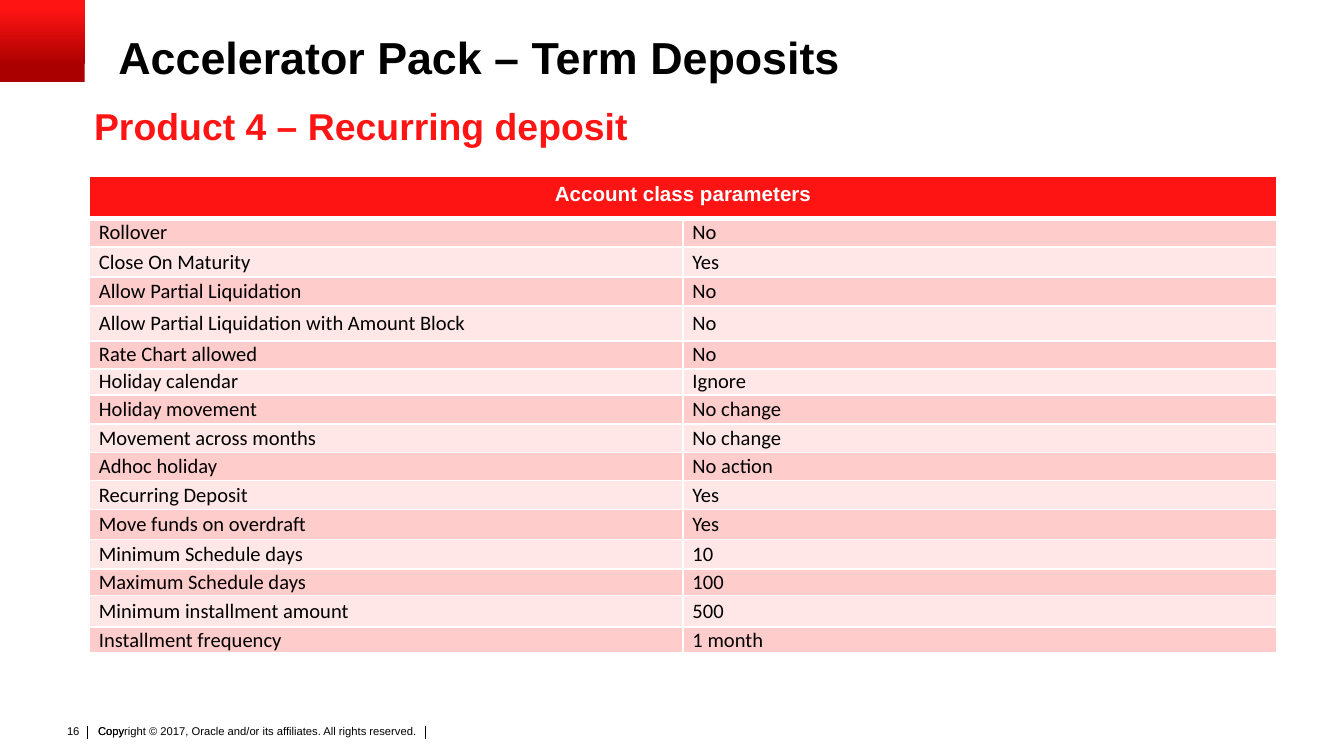
from lxml.etree import SubElement
from pptx import Presentation
from pptx.dml.color import RGBColor
from pptx.enum.shapes import MSO_CONNECTOR, MSO_SHAPE
from pptx.enum.text import MSO_ANCHOR as ANCHOR, MSO_AUTO_SIZE as FIT, PP_ALIGN as ALIGN
from pptx.oxml.ns import qn
from pptx.util import Pt

BLACK = RGBColor(0, 0, 0)
WHITE = RGBColor(255, 255, 255)
RED = RGBColor(0xFF, 0x14, 0x14)
DARK_RED = RGBColor(0xAA, 0, 0)
BANDS = [RGBColor(0xFF, 0xCC, 0xCC), RGBColor(0xFF, 0xE7, 0xE7)]

TITLE = "Accelerator Pack – Term Deposits"
SUBTITLE = "Product 4 – Recurring deposit"
HEADER = "Account class parameters"
HEADER_HEIGHT = 22.4
PARAMETERS = [
    ("Rollover", "No", 15.5),
    ("Close On Maturity", "Yes", 16),
    ("Allow Partial Liquidation", "No", 15.5),
    ("Allow Partial Liquidation with Amount Block", "No", 18.75),
    ("Rate Chart allowed", "No", 15),
    ("Holiday calendar", "Ignore", 14),
    ("Holiday movement", "No change", 15.5),
    ("Movement across months", "No change", 15.5),
    ("Adhoc holiday", "No action", 15),
    ("Recurring Deposit", "Yes", 15.5),
    ("Move funds on overdraft", "Yes", 16),
    ("Minimum Schedule days", "10", 16),
    ("Maximum Schedule days", "100", 14),
    ("Minimum installment amount", "500", 17),
    ("Installment frequency", "1 month", 14),
]
FOOTER = [
    ("Copyright © 2017, Oracle and/or its affiliates. All rights reserved.",
     (49.7, 386.6, 197.3, 17.3), (2.9, 1.4), ALIGN.LEFT),
    ("Copy", (49.7, 386.6, 197.3, 17.3), (2.9, 1.4), ALIGN.LEFT),
    ("16", (28.1, 384.5, 21.6, 14.4), (7.2, 3.6), ALIGN.RIGHT),
]
DIVIDERS = [46.8, 228]


def style(p, size, color, bold=False, font="Arial"):
    for r in p.runs:
        r.font.name, r.font.size, r.font.bold = font, Pt(size), bold
        r.font.color.rgb = color


def set_margins(box, x, y):
    box.margin_left = box.margin_right = Pt(x)
    box.margin_top = box.margin_bottom = Pt(y)


def place(sp, left, top, width, height):
    sp.left, sp.top, sp.width, sp.height = Pt(left), Pt(top), Pt(width), Pt(height)


def fill_placeholder(sp, text, box, size, color):
    place(sp, *box)
    tf = sp.text_frame
    tf.text = text
    tf.auto_size, tf.vertical_anchor = FIT.NONE, ANCHOR.TOP
    set_margins(tf, 0, 0)
    p = tf.paragraphs[0]
    pPr = p._p.get_or_add_pPr()
    pPr.set("marL", "0")
    pPr.set("indent", "0")
    SubElement(pPr, qn("a:buNone"))
    p.alignment, p.space_before = ALIGN.LEFT, Pt(0)
    style(p, size, color, True)
    return p


def set_borders(cell, top, bottom):
    tcPr = cell._tc.get_or_add_tcPr()
    for side, width in zip("LRTB", (1, 1, top, bottom)):
        ln = SubElement(tcPr, qn(f"a:ln{side}"), w=str(Pt(width)))
        SubElement(SubElement(ln, qn("a:solidFill")), qn("a:srgbClr"), val=str(WHITE))


def set_cell(cell, text, color, top=1, bottom=1):
    set_borders(cell, top, bottom)
    cell.fill.solid()
    cell.fill.fore_color.rgb = color
    cell.text_frame.text = text
    return cell.text_frame.paragraphs[0]


prs = Presentation()
prs.slide_width, prs.slide_height = Pt(720), Pt(405)
slide = prs.slides.add_slide(prs.slide_layouts[1])
shapes = slide.shapes

corner = shapes.add_shape(MSO_SHAPE.RECTANGLE, 0, 0, Pt(45.4), Pt(43.9))
corner.shadow.inherit = False
corner.line.fill.background()
corner.fill.gradient()
corner.fill.gradient_angle = 90
for stop, (position, color) in zip(corner.fill.gradient_stops, [(0.2, DARK_RED), (0.9, RED)]):
    stop.position, stop.color.rgb = position, color

p = fill_placeholder(shapes.title, TITLE, (63.4, 19.4, 648, 24.5), 24, BLACK)
p.line_spacing = 0.9
fill_placeholder(slide.placeholders[1], SUBTITLE, (50.4, 55.4, 648, 25.9), 20, RED)

for text, box, margins, align in FOOTER:
    sp = shapes.add_textbox(*map(Pt, box))
    tf = sp.text_frame
    tf.text, tf.word_wrap = text, align == ALIGN.LEFT
    set_margins(tf, *margins)
    tf.paragraphs[0].alignment = align
    style(tf.paragraphs[0], 6, BLACK)

for x in DIVIDERS:
    line = shapes.add_connector(MSO_CONNECTOR.STRAIGHT, Pt(x), Pt(388.8), Pt(x), Pt(396))
    line.line.color.rgb, line.line.width = BLACK, Pt(0.5)
    SubElement(line._element.spPr, qn("a:effectLst"))

heights = [HEADER_HEIGHT] + [height for *_, height in PARAMETERS]
table = shapes.add_table(len(heights), 2, Pt(48), Pt(94.5), Pt(636), Pt(sum(heights))).table
for row, height in zip(table.rows, heights):
    row.height = Pt(height)

table.cell(0, 0).merge(table.cell(0, 1))
p = set_cell(table.cell(0, 0), HEADER, RED, bottom=3)
p.alignment = ALIGN.CENTER
style(p, 11, WHITE, True)

for i, (*texts, _) in enumerate(PARAMETERS):
    for j, text in enumerate(texts):
        cell = table.cell(i + 1, j)
        p = set_cell(cell, text, BANDS[i % 2], top=1 if i else 3)
        cell.vertical_anchor = ANCHOR.MIDDLE
        set_margins(cell, 5, 0)
        p.space_after = Pt(10)
        style(p, 11, BLACK, font="Calibri")

prs.save("out.pptx")
